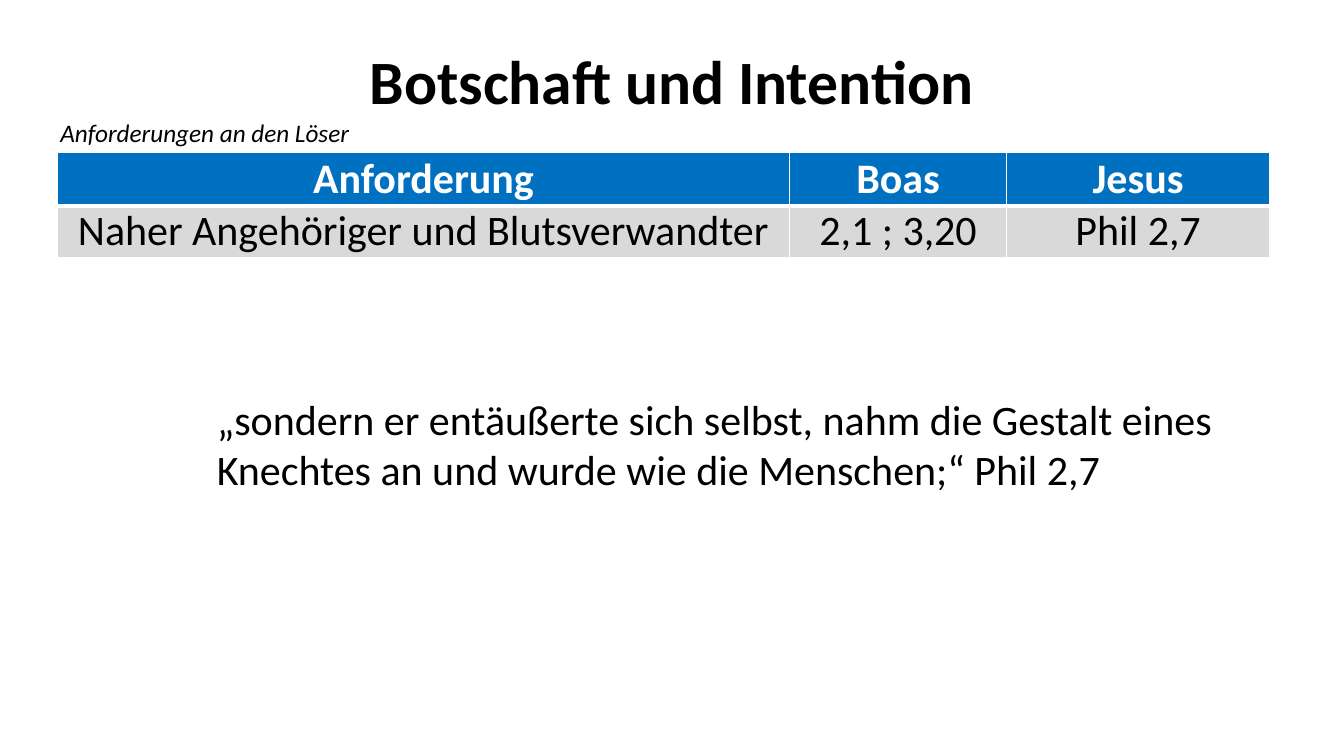
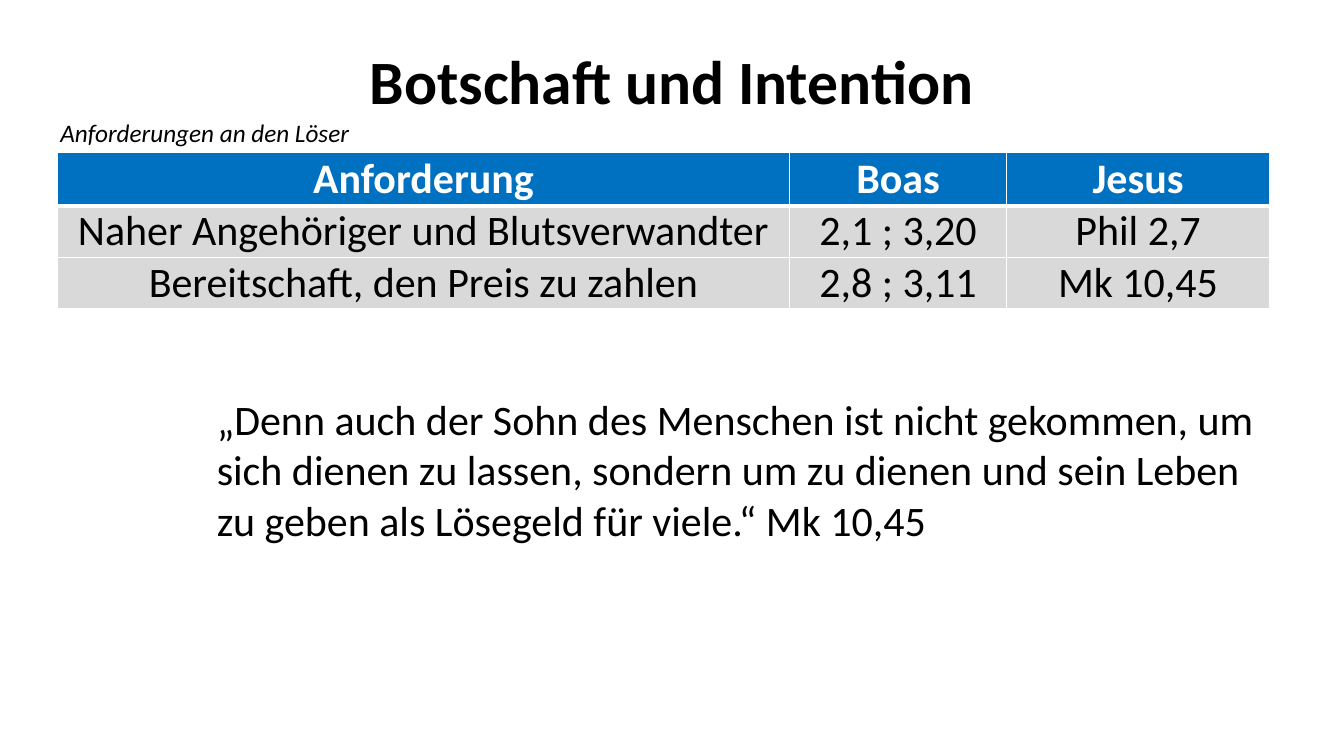
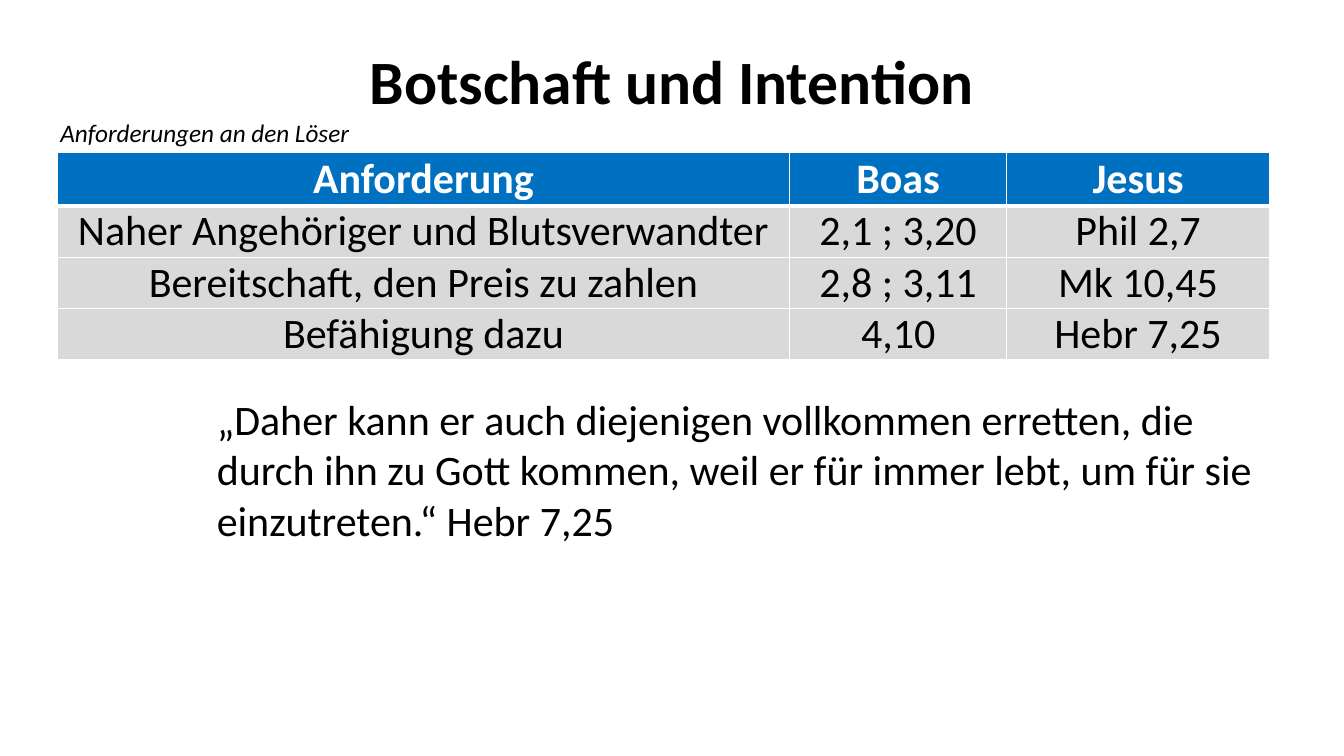
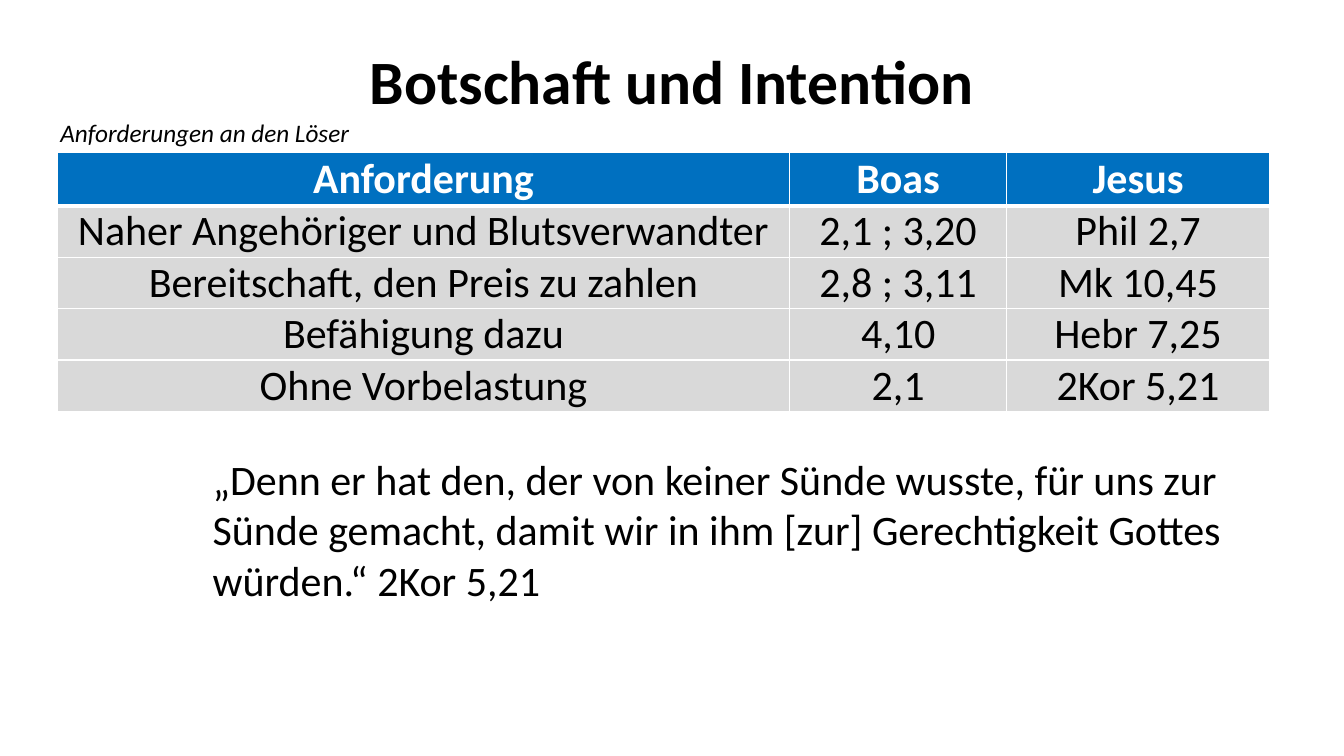
from pptx import Presentation
from pptx import util as u
from pptx.dml.color import RGBColor
from pptx.enum import text
from pptx.oxml import parse_xml
from pptx.oxml.ns import nsdecls

PX = 9525  # EMU per px, 96 px to the inch
FONT = "Calibri"
BLACK = RGBColor(0x00, 0x00, 0x00)
WHITE = RGBColor(0xFF, 0xFF, 0xFF)
BLUE = RGBColor(0x00, 0x70, 0xC0)
GREY = RGBColor(0xD9, 0xD9, 0xD9)

TITLE = "Botschaft und Intention"
CAPTION = "Anforderungen an den Löser"
BODY_SIZE = 30
LINE_HEIGHT = 49
COLUMNS = (697, 207, 250)
HEADER = ("Anforderung", "Boas", "Jesus")
REQUIREMENTS = (
    ("Naher Angehöriger und Blutsverwandter", "2,1 ; 3,20", "Phil 2,7"),
    ("Bereitschaft, den Preis zu zahlen", "2,8 ; 3,11", "Mk 10,45"),
    ("Befähigung dazu", "4,10", "Hebr 7,25"),
    ("Ohne Vorbelastung", "2,1", "2Kor 5,21"),
)

# One verse per slide: left, top, number of lines, wording
VERSES = (
    (197, 370, 2, "„sondern er entäußerte sich selbst, nahm die Gestalt eines "
                  "Knechtes an und wurde wie die Menschen;“ Phil 2,7"),
    (197, 370, 3, "„Denn auch der Sohn des Menschen ist nicht gekommen, um "
                  "sich dienen zu lassen, sondern um zu dienen und sein Leben "
                  "zu geben als Lösegeld für viele.“ Mk 10,45"),
    (197, 370, 3, "„Daher kann er auch diejenigen vollkommen erretten, die "
                  "durch ihn zu Gott kommen, weil er für immer lebt, um für sie "
                  "einzutreten.“ Hebr 7,25"),
    (193, 427, 3, "„Denn er hat den, der von keiner Sünde wusste, für uns zur "
                  "Sünde gemacht, damit wir in ihm [zur] Gerechtigkeit "
                  "Gottes würden.“ 2Kor 5,21"),
)


def px(*lengths):
    return [u.Emu(length * PX) for length in lengths]


def write(frame, wording, size, color=BLACK, bold=False, italic=False):
    frame.text = wording
    paragraph = frame.paragraphs[0]
    font = paragraph.runs[0].font
    font.name, font.size = FONT, u.Pt(size)
    font.bold, font.italic = bold, italic
    font.color.rgb = color
    return paragraph


def add_text(slide, box, wording, size, wrap=True, **style):
    frame = slide.shapes.add_textbox(*px(*box)).text_frame
    paragraph = write(frame, wording, size, **style)
    frame.word_wrap = wrap
    frame.auto_size = text.MSO_AUTO_SIZE.SHAPE_TO_FIT_TEXT
    return frame, paragraph


def add_title(slide):
    frame, paragraph = add_text(slide, (88, 38, 1104, 85), TITLE, 44, bold=True)
    frame.auto_size = text.MSO_AUTO_SIZE.NONE
    frame.vertical_anchor = text.MSO_ANCHOR.MIDDLE
    paragraph.alignment = text.PP_ALIGN.CENTER
    paragraph.line_spacing = 0.9


def set_borders(cell, bottom):
    properties = cell._tc.get_or_add_tcPr()
    for side, points in (("L", 1), ("R", 1), ("T", 1), ("B", bottom)):
        properties.append(parse_xml(
            f'<a:ln{side} {nsdecls("a")} w="{u.Pt(points)}"><a:solidFill>'
            f'<a:srgbClr val="{WHITE}"/></a:solidFill></a:ln{side}>'))


def fill_cell(cell, wording, is_header):
    paragraph = write(cell.text_frame, wording, BODY_SIZE,
                      color=WHITE if is_header else BLACK, bold=is_header)
    paragraph.alignment = text.PP_ALIGN.CENTER
    cell.vertical_anchor = text.MSO_ANCHOR.MIDDLE
    cell.margin_left, cell.margin_right = px(13, 13)
    cell.margin_top = cell.margin_bottom = 0
    set_borders(cell, bottom=3 if is_header else 1)
    cell.fill.solid()
    cell.fill.fore_color.rgb = BLUE if is_header else GREY


def add_requirements(slide, requirements):
    rows = (HEADER, *requirements)
    heights = [51] + [LINE_HEIGHT] * len(requirements)
    table = slide.shapes.add_table(
        len(rows), len(COLUMNS),
        *px(55, 145, sum(COLUMNS), sum(heights))).table
    for column, width in zip(table.columns, px(*COLUMNS)):
        column.width = width
    for row, height, wordings in zip(table.rows, px(*heights), rows):
        row.height = height
        for cell, wording in zip(row.cells, wordings):
            fill_cell(cell, wording, wordings is HEADER)


def main():
    deck = Presentation()
    deck.slide_width, deck.slide_height = px(1280, 720)
    # Each slide reveals one more requirement with its verse
    for shown, (left, top, lines, verse) in enumerate(VERSES, start=1):
        slide = deck.slides.add_slide(deck.slide_layouts[6])
        add_title(slide)
        add_requirements(slide, REQUIREMENTS[:shown])
        add_text(slide, (48, 107, 298, 38), CAPTION, 18, wrap=False, italic=True)
        add_text(slide, (left, top, 1015, 10 + lines * LINE_HEIGHT),
                 verse, BODY_SIZE)
    deck.save("out.pptx")


if __name__ == "__main__":
    main()
